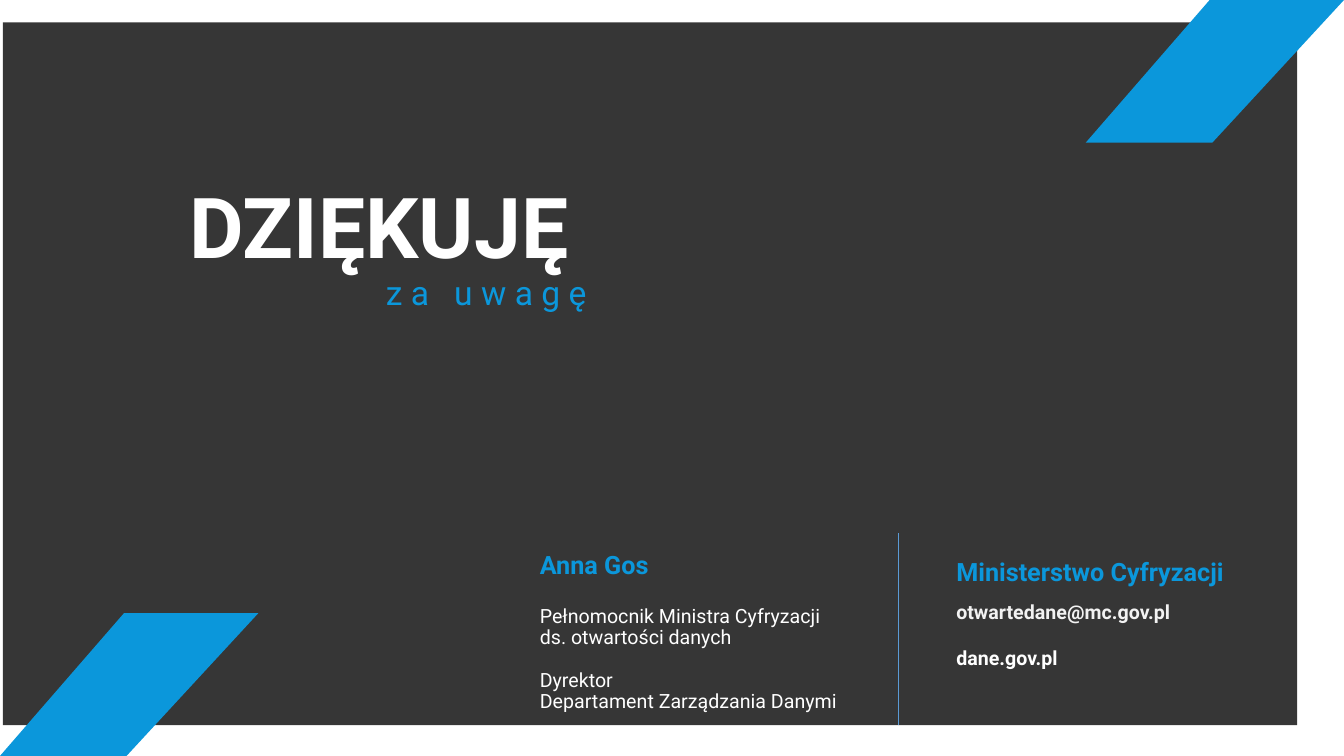
import pptx
import pptx.util
import pptx.dml.color
import pptx.enum.shapes
import pptx.enum.text
import pptx.oxml
import pptx.oxml.ns
import lxml.etree

Pt = pptx.util.Pt
HUES = {"black": "000000", "blue": "0B97DB", "white": "FFFFFF",
        "pale": "F2F2F2", "rule": "5B9BD5"}
FONT = "Roboto"


def hue(name):
    return pptx.dml.color.RGBColor.from_string(HUES[name])


def add_tag(node, tag, **attrs):
    return lxml.etree.SubElement(node, pptx.oxml.ns.qn(tag), attrs)


def paint(shape, name):
    shape.shadow.inherit = False
    shape.fill.solid()
    shape.fill.fore_color.rgb = hue(name)
    shape.line.fill.background()


def style(para, size, name, bold=False):
    for run in para.runs:
        run.font.name = FONT
        run.font.size = Pt(size)
        run.font.bold = bold
        run.font.color.rgb = hue(name)


def set_frame(shape):
    frame = shape.text_frame
    frame.word_wrap = True
    frame.auto_size = pptx.enum.text.MSO_AUTO_SIZE.NONE
    frame.vertical_anchor = pptx.enum.text.MSO_ANCHOR.TOP
    return frame


def add_panel(slide, left, top, width, height):
    panel = slide.shapes.add_shape(pptx.enum.shapes.MSO_SHAPE.RECTANGLE,
                                   Pt(left), Pt(top), Pt(width), Pt(height))
    paint(panel, "black")
    tint = panel.fill._xPr.find(".//" + pptx.oxml.ns.qn("a:srgbClr"))
    add_tag(tint, "a:alpha", val="79000")


def add_band(slide, left, top, width, height):
    right, base = left + width, top + height
    form = slide.shapes.build_freeform(Pt(left), Pt(base))
    points = [(left + 0.49 * width, base), (right, top), (left + 0.48 * width, top)]
    form.add_line_segments([(Pt(x), Pt(y)) for x, y in points], close=True)
    paint(form.convert_to_shape(), "blue")


def add_thanks(slide, left, top, width, height):
    title = slide.shapes.title
    slide.shapes._spTree.append(title._element)
    title.left, title.top = Pt(left), Pt(top)
    title.width, title.height = Pt(width), Pt(height)
    para = set_frame(title).paragraphs[0]
    para.text = "DZIĘKUJĘ"
    para.alignment = pptx.enum.text.PP_ALIGN.LEFT
    style(para, 60, "white", True)

    box = slide.shapes.add_textbox(Pt(left + 140.5), Pt(top + 69.5), Pt(176), Pt(36))
    para = set_frame(box).paragraphs[0]
    para.text = "za uwagę"
    style(para, 24, "blue")
    para.runs[0].font._element.set("spc", "600")


def add_lines(slide, left, top, width, height, lines, pitch):
    box = slide.shapes.add_textbox(Pt(left), Pt(top), Pt(width), Pt(height))
    frame = set_frame(box)
    for i, (text, size, name, bold, gap) in enumerate(lines):
        para = frame.add_paragraph() if i else frame.paragraphs[0]
        para.text = text
        para.line_spacing = pitch
        if gap:
            para.space_before = Pt(gap)
        style(para, size, name, bold)


def add_rule(slide, left, top, height):
    rule = slide.shapes.add_connector(pptx.enum.shapes.MSO_CONNECTOR.STRAIGHT,
                                      Pt(left), Pt(top + height), Pt(left), Pt(top))
    rule.line.color.rgb = hue("rule")
    rule.line.width = Pt(0.5)
    add_tag(rule._element.spPr, "a:effectLst")


def main():
    deck = pptx.Presentation()
    deck.slide_width, deck.slide_height = Pt(960), Pt(540)
    slide = deck.slides.add_slide(deck.slide_layouts[5])
    add_panel(slide, 2, 16, 924.5, 502)
    add_band(slide, 0, 438, 184.5, 102)
    add_band(slide, 775.5, 0, 184.5, 102)
    add_thanks(slide, 128, 121, 314, 80)
    person = [
        ("Anna Gos", 18, "blue", True, 0),
        ("Pełnomocnik Ministra Cyfryzacji", 14, "white", False, 19),
        ("ds. otwartości danych", 14, "white", False, 0),
        ("Dyrektor", 14, "white", False, 15),
        ("Departament Zarządzania Danymi", 14, "white", False, 0),
    ]
    add_lines(slide, 378.5, 391.5, 250, 124, person, 0.9)
    office = [
        ("Ministerstwo Cyfryzacji", 18, "blue", True, 0),
        ("otwartedane@mc.gov.pl", 14, "pale", True, 9.5),
        ("dane.gov.pl", 14, "white", True, 16.5),
    ]
    add_lines(slide, 676, 393.5, 225, 90, office, 1.0)
    add_rule(slide, 642, 381, 137)
    deck.save("out.pptx")


if __name__ == "__main__":
    main()
